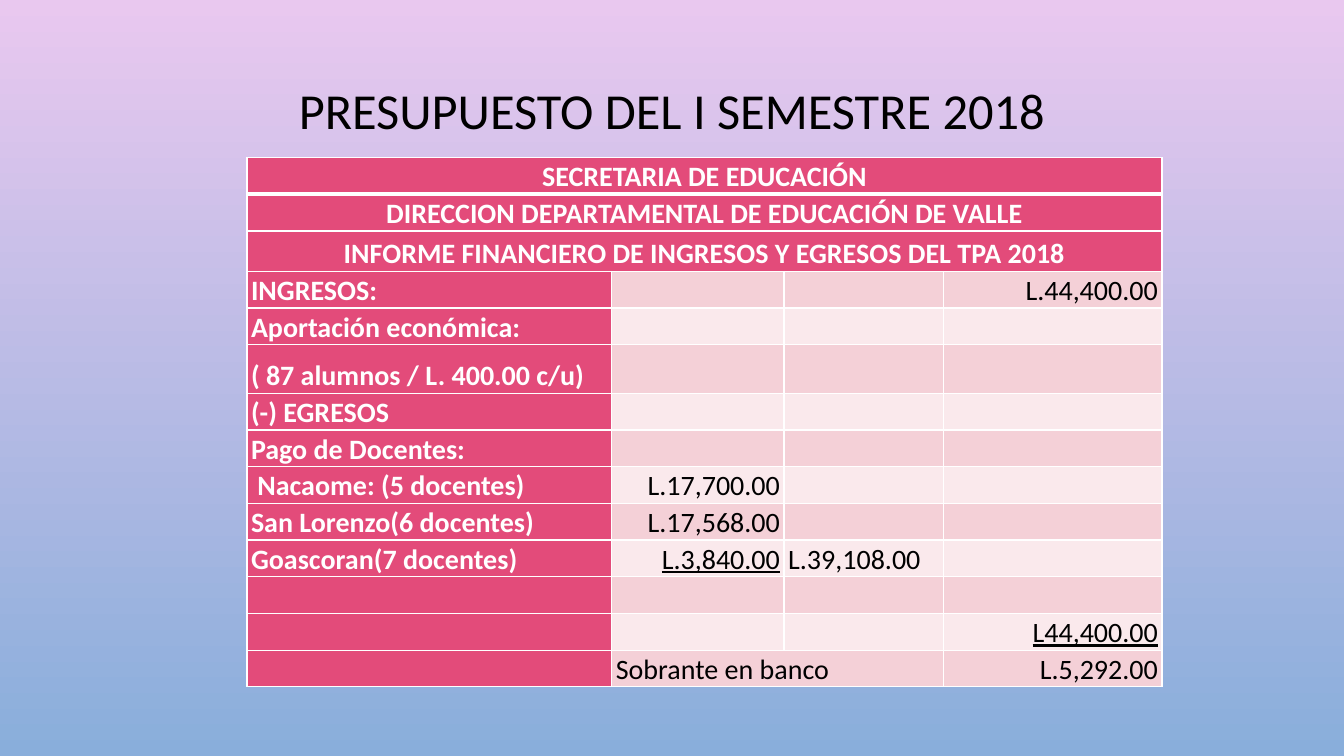
from dataclasses import dataclass

from lxml import etree
from pptx import Presentation
from pptx.dml.color import RGBColor
from pptx.enum import text
from pptx.oxml import ns
from pptx.util import Pt


@dataclass(frozen=True)
class Theme:
    font: str = "Calibri"
    title_size: int = 36
    table_size: int = 20
    ink: str = "000000"
    white: str = "FFFFFF"
    accent: str = "E34B7A"
    bands: tuple = ("F4D0D7", "FAE9EC")
    sky: tuple = ("E9C8EF", "89AEDB")


THEME = Theme()
ALIGN = text.PP_ALIGN

HEADINGS = [
    "SECRETARIA DE EDUCACIÓN",
    "DIRECCION DEPARTAMENTAL DE EDUCACIÓN DE VALLE",
    "INFORME FINANCIERO DE INGRESOS Y EGRESOS DEL TPA 2018",
]
BUDGET = [
    ("INGRESOS:", "", "", "L.44,400.00"),
    ("Aportación económica:", "", "", ""),
    ("( 87 alumnos / L. 400.00 c/u)", "", "", ""),
    ("(-) EGRESOS", "", "", ""),
    ("Pago de Docentes:", "", "", ""),
    (" Nacaome: (5 docentes)", "L.17,700.00", "", ""),
    ("San Lorenzo(6 docentes)", "L.17,568.00", "", ""),
    ("Goascoran(7 docentes)", "L.3,840.00", "L.39,108.00", ""),
    ("", "", "", ""),
    ("", "", "", "L44,400.00"),
    ("", "Sobrante en banco", "", "L.5,292.00"),
]
UNDERLINED = {"L.3,840.00", "L44,400.00"}
LEFT_ALIGNED = {"L.39,108.00", "Sobrante en banco"}
COL_WIDTHS = (260.6, 123.1, 113.8, 156.2)
ROW_HEIGHT = 26.2
TALL_ROWS = {2: 28.8, 5: 34.6}


def rgb(value):
    return RGBColor.from_string(value)


def style_runs(p, size, color, bold=False, underline=False):
    for r in p.runs:
        r.font.name = THEME.font
        r.font.size = Pt(size)
        r.font.color.rgb = rgb(color)
        r.font.bold = bold
        r.font.underline = underline


def add_borders(cell, **widths):
    """Draw white cell edges, 1 pt unless a width is given for lnL, lnR, lnT or lnB."""
    props = cell._tc.get_or_add_tcPr()
    for edge in ("lnL", "lnR", "lnT", "lnB"):
        ln = etree.SubElement(props, ns.qn(f"a:{edge}"), w=str(Pt(widths.get(edge, 1))))
        fill = etree.SubElement(ln, ns.qn("a:solidFill"))
        etree.SubElement(fill, ns.qn("a:srgbClr"), val=THEME.white)


def format_cell(cell, content, fill, color, align, bold, **borders):
    add_borders(cell, **borders)
    cell.fill.solid()
    cell.fill.fore_color.rgb = rgb(fill)
    cell.margin_left = cell.margin_right = Pt(2.9)
    cell.margin_top = cell.margin_bottom = 0
    cell.vertical_anchor = text.MSO_ANCHOR.BOTTOM
    cell.text_frame.text = content
    p = cell.text_frame.paragraphs[0]
    p.alignment = align
    p.line_spacing = 1.07
    style_runs(p, THEME.table_size, color, bold, content in UNDERLINED)


def add_title(s, content, left, top, width, height):
    sp = s.shapes.title
    sp.left, sp.top, sp.width, sp.height = map(Pt, (left, top, width, height))
    tf = sp.text_frame
    tf.text = content
    tf.word_wrap = True
    tf.vertical_anchor = text.MSO_ANCHOR.MIDDLE
    p = tf.paragraphs[0]
    p.alignment = ALIGN.CENTER
    p.line_spacing = 0.9
    style_runs(p, THEME.title_size, THEME.ink)


def add_budget_table(s, left, top):
    heights = [TALL_ROWS.get(i, ROW_HEIGHT) for i in range(len(HEADINGS) + len(BUDGET))]
    table = s.shapes.add_table(len(heights), len(COL_WIDTHS), Pt(left), Pt(top),
                               Pt(sum(COL_WIDTHS)), Pt(sum(heights))).table
    for column, width in zip(table.columns, COL_WIDTHS):
        column.width = Pt(width)
    for row, height in zip(table.rows, heights):
        row.height = Pt(height)

    last_col = len(COL_WIDTHS) - 1
    for i, heading in enumerate(HEADINGS):
        table.cell(i, 0).merge(table.cell(i, last_col))
        for j in range(last_col + 1):
            format_cell(table.cell(i, j), "" if j else heading, THEME.accent, THEME.white,
                        ALIGN.CENTER, True, lnB=1 if i else 3)

    last_row = len(heights) - 1
    table.cell(last_row, 1).merge(table.cell(last_row, 2))
    for i, (label, *amounts) in enumerate(BUDGET):
        row = i + len(HEADINGS)
        format_cell(table.cell(row, 0), label, THEME.accent, THEME.white, ALIGN.LEFT, True)
        for j, amount in enumerate(amounts, 1):
            align = ALIGN.LEFT if amount in LEFT_ALIGNED else ALIGN.RIGHT
            format_cell(table.cell(row, j), amount, THEME.bands[i % 2], THEME.ink, align, False)


def paint_background(s):
    fill = s.background.fill
    fill.gradient()
    fill.gradient_angle = 270
    for stop, color in zip(fill.gradient_stops, THEME.sky):
        stop.color.rgb = rgb(color)


def main():
    prs = Presentation()
    prs.slide_width, prs.slide_height = Pt(960), Pt(540)
    s = prs.slides.add_slide(prs.slide_layouts.get_by_name("Title Only"))
    paint_background(s)
    add_title(s, "PRESUPUESTO DEL I SEMESTRE 2018", 72, 49, 816, 64)
    add_budget_table(s, 176.4, 112.6)
    prs.save("out.pptx")


if __name__ == "__main__":
    main()
